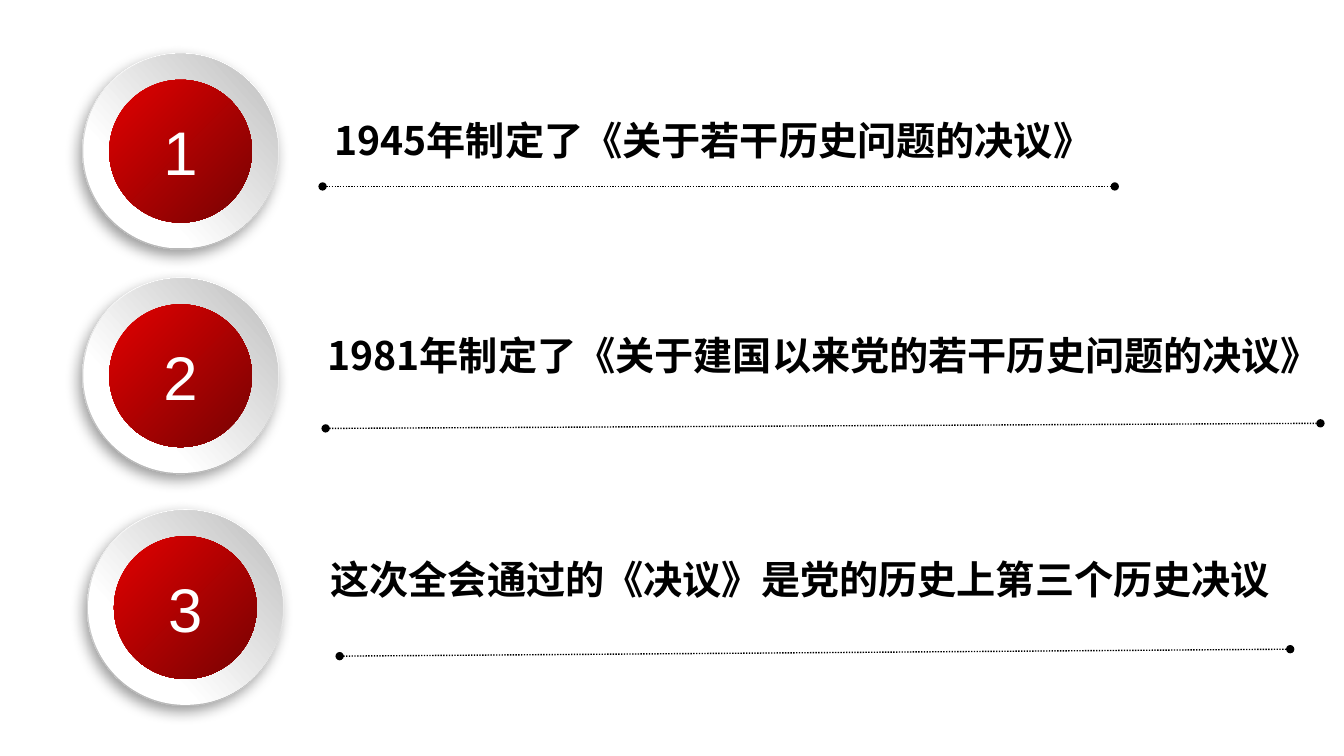
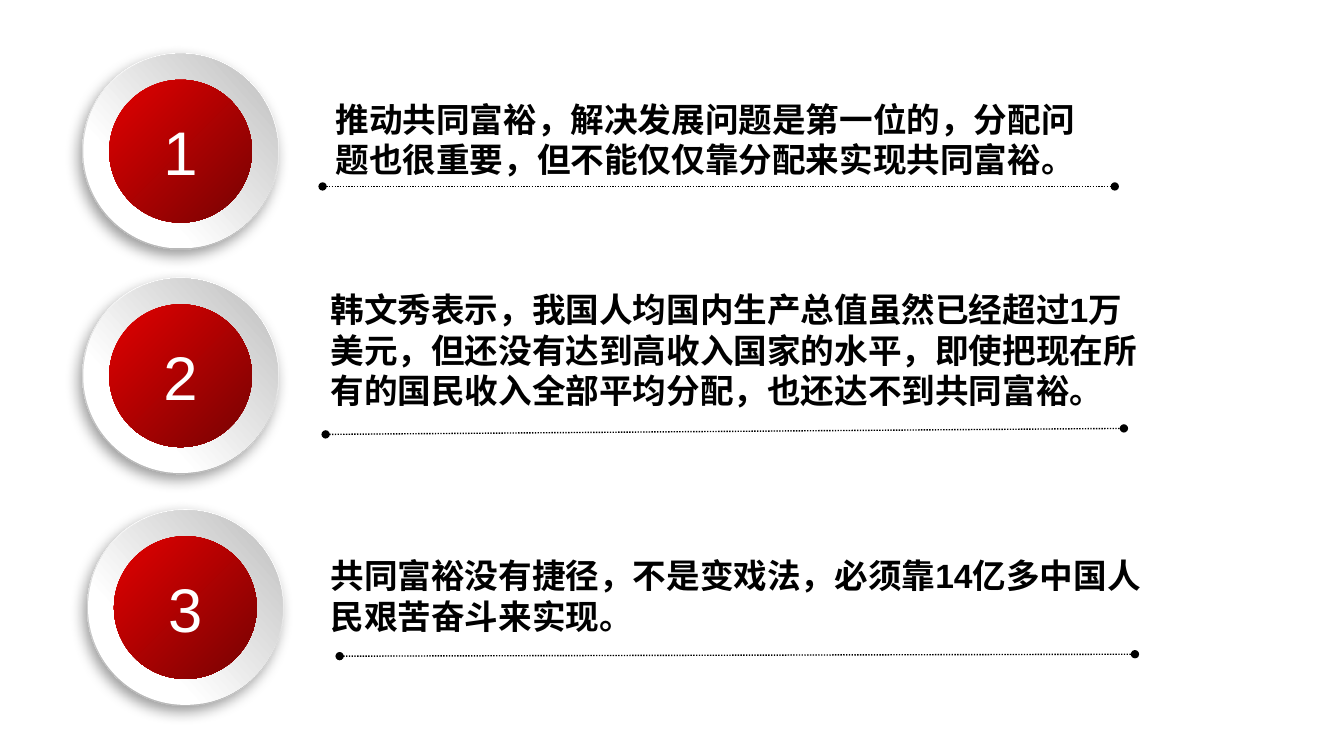
from lxml import etree
from pptx import Presentation
from pptx.dml.color import RGBColor
from pptx.enum.dml import MSO_LINE
from pptx.enum.shapes import MSO_CONNECTOR, MSO_SHAPE
from pptx.enum.text import MSO_ANCHOR, MSO_AUTO_SIZE, PP_ALIGN
from pptx.oxml.ns import qn
from pptx.util import Pt

OVAL = MSO_SHAPE.OVAL
STRAIGHT = MSO_CONNECTOR.STRAIGHT
DOTTED = MSO_LINE.ROUND_DOT
CENTER = PP_ALIGN.CENTER
MIDDLE = MSO_ANCHOR.MIDDLE
TOP = MSO_ANCHOR.TOP
FIT_SHAPE = MSO_AUTO_SIZE.SHAPE_TO_FIT_TEXT

BLACK = "000000"
WHITE = "FFFFFF"
LATIN_FONT = "Arial"
CHINESE_FONT = "Noto Sans CJK SC"

RIM_STOPS = ((0.17, WHITE), (0.88, "B8B8B8"))
RING_STOPS = ((0.29, WHITE), (0.98, "BFBFBF"))
CORE_STOPS = ((0, "E30000"), (1, "760303"))
BADGE_CENTERS = ((129, 108), (129, 268.4), (132.4, 434))

RESOLUTIONS = (
    ("1945年制定了《关于若干历史问题的决议》",
     (231.8, 79.2, 588.2, 41), (230.4, 133.2, 796.3, 133.2)),
    ("1981年制定了《关于建国以来党的若干历史问题的决议》",
     (226.8, 233.3, 724.3, 41), (232.6, 306, 943.2, 302.4)),
    ("这次全会通过的《决议》是党的历史上第三个历史决议",
     (229, 393.1, 710.6, 41), (242.6, 468.7, 921.6, 463.7)),
)
PROSPERITY = (
    ("推动共同富裕，解决发展问题是第一位的，分配问题也很重要，但不能仅仅靠分配来实现共同富裕。",
     (232.6, 67, 563.8, 65.5), (230.4, 133.2, 796.3, 133.2)),
    ("韩文秀表示，我国人均国内生产总值虽然已经超过1万美元，但还没有达到高收入国家的水平，"
     "即使把现在所有的国民收入全部平均分配，也还达不到共同富裕。",
     (229, 203, 596.2, 94.3), (232.6, 310.3, 802.8, 306)),
    ("共同富裕没有捷径，不是变戏法，必须靠14亿多中国人民艰苦奋斗来实现。",
     (229, 393.1, 606.2, 65.5), (242.6, 468.7, 810.7, 467.3)),
)


def color(value):
    return RGBColor.from_string(value)


def points(values):
    return [Pt(value) for value in values]


def style_paragraph(paragraph, size, font_name, font_color, bold=False):
    font = paragraph.font
    font.size = Pt(size)
    font.bold = bold
    font.color.rgb = color(font_color)
    font.name = font_name
    properties = paragraph._p.find(".//" + qn("a:defRPr"))
    etree.SubElement(properties, qn("a:ea"), typeface=CHINESE_FONT)


def add_disc(page, center, diameter, stops, angle):
    left, top = (value - diameter / 2 for value in center)
    disc = page.shapes.add_shape(OVAL, *points((left, top, diameter, diameter)))
    disc.shadow.inherit = False
    disc.line.fill.background()
    disc.fill.gradient()
    disc.fill.gradient_angle = angle
    for stop, (position, value) in zip(disc.fill.gradient_stops, stops):
        stop.position = position
        stop.color.rgb = color(value)
    return disc


def add_drop_shadow(shape):
    effects = shape._element.spPr.find(qn("a:effectLst"))
    shadow = etree.SubElement(
        effects, qn("a:outerShdw"), blurRad=str(Pt(10)), dist=str(Pt(5)),
        dir=str(123 * 60000), algn="ctr", rotWithShape="0")
    tint = etree.SubElement(shadow, qn("a:srgbClr"), val=BLACK)
    etree.SubElement(tint, qn("a:alpha"), val="39000")


def add_badge(page, center, number):
    rim = add_disc(page, center, 140.5, RIM_STOPS, 253)
    add_drop_shadow(rim)
    add_disc(page, center, 139, RING_STOPS, 42)
    core = add_disc(page, center, 102, CORE_STOPS, 315)
    frame = core.text_frame
    frame.vertical_anchor = MIDDLE
    paragraph = frame.paragraphs[0]
    paragraph.text = str(number)
    paragraph.alignment = CENTER
    style_paragraph(paragraph, 44, LATIN_FONT, WHITE)


def add_statement(page, text, bounds, size, font_name):
    box = page.shapes.add_textbox(*points(bounds))
    frame = box.text_frame
    frame.word_wrap = True
    frame.auto_size = FIT_SHAPE
    frame.vertical_anchor = TOP
    paragraph = frame.paragraphs[0]
    paragraph.text = text
    style_paragraph(paragraph, size, font_name, BLACK, bold=True)


def add_dotted_rule(page, ends):
    rule = page.shapes.add_connector(STRAIGHT, *points(ends))
    rule.line.width = Pt(1)
    rule.line.color.rgb = color(BLACK)
    rule.line.dash_style = DOTTED
    properties = rule._element.spPr
    outline = properties.find(qn("a:ln"))
    for end in ("a:headEnd", "a:tailEnd"):
        etree.SubElement(outline, qn(end), type="oval")
    etree.SubElement(properties, qn("a:effectLst"))


def add_numbered_page(deck, rows, size, font_name):
    page = deck.slides.add_slide(deck.slide_layouts[6])
    for number, (center, row) in enumerate(zip(BADGE_CENTERS, rows), 1):
        text, bounds, ends = row
        add_badge(page, center, number)
        add_statement(page, text, bounds, size, font_name)
        add_dotted_rule(page, ends)


def main():
    deck = Presentation()
    deck.slide_width = Pt(960)
    deck.slide_height = Pt(540)
    add_numbered_page(deck, RESOLUTIONS, 28, CHINESE_FONT)
    add_numbered_page(deck, PROSPERITY, 24, LATIN_FONT)
    deck.save("out.pptx")


if __name__ == "__main__":
    main()
